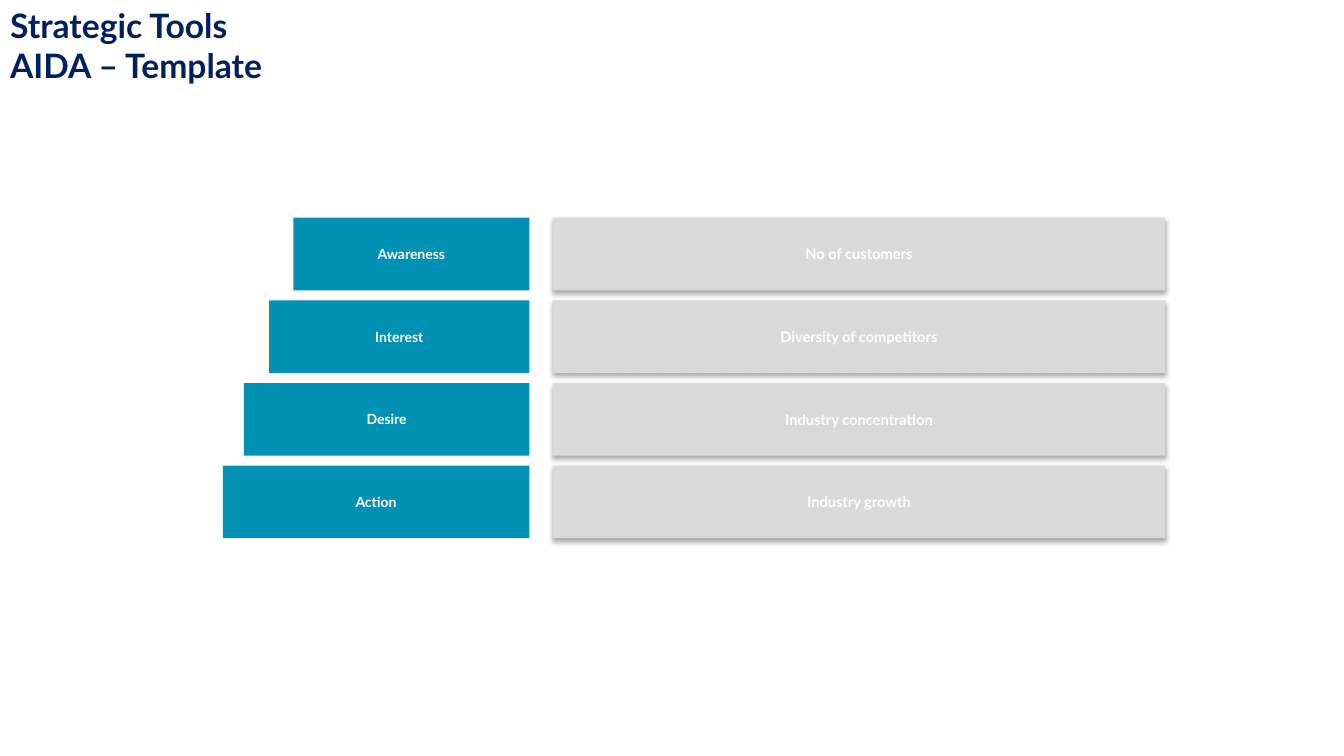
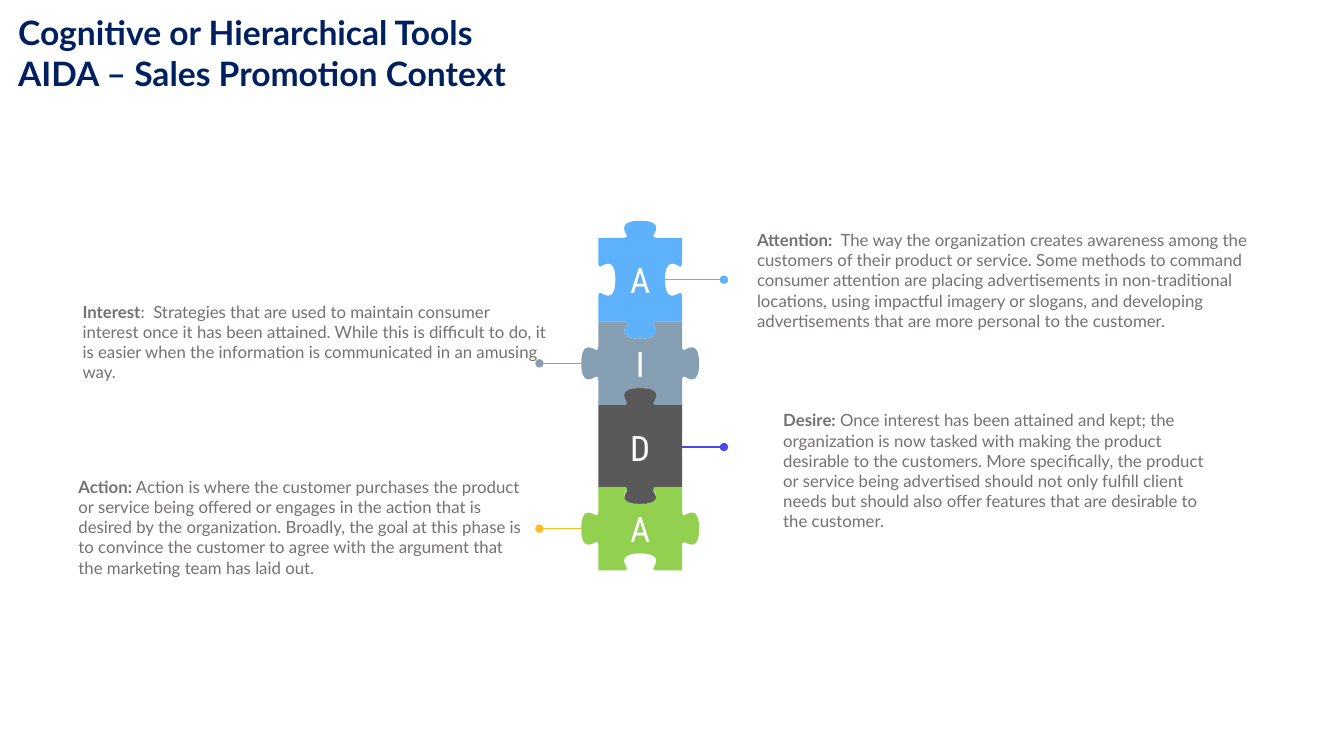
from dataclasses import dataclass

from lxml import etree
from pptx import Presentation
from pptx.dml.color import RGBColor as RGB
from pptx.enum.shapes import MSO_CONNECTOR as LINK, MSO_SHAPE as SHAPE
from pptx.enum.text import MSO_ANCHOR as ANCHOR, MSO_AUTO_SIZE as FIT, PP_ALIGN as ALIGN
from pptx.oxml.ns import qn
from pptx.util import Inches, Pt

# Shared look
NAVY = RGB(0x00, 0x20, 0x60)
TEAL = RGB(0x00, 0x91, 0xB5)
SILVER = RGB(0xD9, 0xD9, 0xD9)
WHITE = RGB(0xFF, 0xFF, 0xFF)
GREY = RGB(0x76, 0x71, 0x71)
SKY = RGB(0x5E, 0xB2, 0xFC)
SLATE = RGB(0x86, 0x9F, 0xB2)
DARK = RGB(0x59, 0x59, 0x59)
GREEN = RGB(0x92, 0xD0, 0x50)
VIOLET = RGB(0x49, 0x49, 0xE7)
AMBER = RGB(0xFC, 0xBD, 0x24)
FONT, THIN = "Lato", "Roboto Condensed"

# Stair of bars
ROW_TOP, ROW_STEP, BAR_H = 2.16, 0.82, 0.72
STEP_END, BAR_X, BAR_W = 5.25, 5.48, 6.08

# Puzzle column: a square cell, and one side's knob as Bezier curves
MID, CELL = 6.35, 0.83
HALF = CELL / 2
KNOB = (
    ((-0.17, 0), (-0.17, 0), (-0.13, 0), (-0.13, 0.02)),
    ((-0.13, 0.02), (-0.13, 0.03), (-0.25, 0.17), (0, 0.17)),
    ((0, 0.17), (0.25, 0.17), (0.13, 0.03), (0.13, 0.02)),
    ((0.13, 0.02), (0.13, 0), (0.17, 0), (0.17, 0)),
)
CUTS = 10


@dataclass
class Step:
    name: str
    width: float
    note: str


@dataclass
class Piece:
    mark: str
    top: float
    fill: RGB
    ends: int  # top and bottom: 1 knob, -1 socket
    sides: int  # left and right: 1 knob, -1 socket, 0 flat
    link: tuple[float, float]
    ink: RGB


@dataclass
class Note:
    head: str
    body: str
    left: float
    top: float
    width: float
    height: float


STEPS = (
    Step("Awareness", 2.34, "No of customers"),
    Step("Interest", 2.58, "Diversity of competitors"),
    Step("Desire", 2.83, "Industry concentration"),
    Step("Action", 3.04, "Industry growth"),
)
RIGHT, LEFT = (6.59, 7.18), (5.94, 5.35)
PIECES = (
    Piece("A", 2.36, SKY, 1, -1, RIGHT, SKY),
    Piece("I", 3.19, SLATE, -1, 1, LEFT, SLATE),
    Piece("D", 4.02, DARK, 1, 0, RIGHT, VIOLET),
    Piece("A", 4.83, GREEN, -1, 1, LEFT, AMBER),
)
NOTES = (
    Note("Attention:", "  The way the organization creates awareness among the customers of "
         "their product or service. Some methods to command consumer attention are placing "
         "advertisements in non-traditional locations, using impactful imagery or slogans, and "
         "developing advertisements that are more personal to the customer.",
         7.41, 2.23, 5.21, 1.11),
    Note("Interest", ":  Strategies that are used to maintain consumer interest once it has been "
         "attained. While this is difficult to do, it is easier when the information is "
         "communicated in an amusing way.", 0.72, 2.94, 4.81, 0.71),
    Note("Desire:", " Once interest has been attained and kept; the organization is now tasked "
         "with making the product desirable to the customers. More specifically, the product or "
         "service being advertised should not only fulfill client needs but should also offer "
         "features that are desirable to the customer.", 7.67, 4.02, 4.47, 1.11),
    Note("Action:", " Action is where the customer purchases the product or service being offered "
         "or engages in the action that is desired by the organization. Broadly, the goal at this "
         "phase is to convince the customer to agree with the argument that the marketing team "
         "has laid out.", 0.68, 4.68, 4.64, 1.11),
)


def add_run(para, text: str, size: float, ink: RGB, bold: bool = False, face: str = FONT) -> None:
    run = para.add_run()
    run.text = text
    font = run.font
    font.name, font.size, font.bold = face, Pt(size), bold
    font.color.rgb = ink


def add_slide(deck, lines: tuple[str, ...], left: float, top: float):
    """Add a slide with its navy title."""
    slide = deck.slides.add_slide(deck.slide_layouts[5])
    title = slide.shapes.title
    title.left, title.top = Inches(left), Inches(top)
    title.width, title.height = Inches(10.53), Inches(0.91)
    frame = title.text_frame
    frame.auto_size, frame.vertical_anchor = FIT.NONE, ANCHOR.TOP
    for i, line in enumerate(lines):
        para = frame.add_paragraph() if i else frame.paragraphs[0]
        para.alignment = ALIGN.LEFT
        add_run(para, line, 24, NAVY, True)
    return slide


def paint(shape, fill: RGB) -> None:
    shape.shadow.inherit = False
    shape.fill.solid()
    shape.fill.fore_color.rgb = fill
    shape.line.fill.background()


def label(shape, text: str, size: float, bold: bool, face: str) -> None:
    frame = shape.text_frame
    frame.vertical_anchor = ANCHOR.MIDDLE
    para = frame.paragraphs[0]
    para.alignment = ALIGN.CENTER
    add_run(para, text, size, WHITE, bold, face)


def add_bar(slide, left: float, top: float, width: float, fill: RGB, text: str, size: float):
    box = slide.shapes.add_shape(
        SHAPE.RECTANGLE, Inches(left), Inches(top), Inches(width), Inches(BAR_H))
    paint(box, fill)
    label(box, text, size, True, FONT)
    return box


def add_shade(shape) -> None:
    """Drop a soft shadow straight down."""
    fx = shape._element.spPr.find(qn("a:effectLst"))
    drop = etree.SubElement(fx, qn("a:outerShdw"), blurRad=str(Pt(3.5)), dist=str(Pt(2.2)),
                            dir="5400000", algn="t", rotWithShape="0")
    tint = etree.SubElement(drop, qn("a:srgbClr"), val="000000")
    etree.SubElement(tint, qn("a:alpha"), val="32000")


def add_link(slide, piece: Piece) -> None:
    y = Inches(piece.top + HALF)
    start, end = map(Inches, piece.link)
    line = slide.shapes.add_connector(LINK.STRAIGHT, start, y, end, y)
    line.line.color.rgb = piece.ink
    line.line.width = Pt(0.75)
    etree.SubElement(line.line._get_or_add_ln(), qn("a:tailEnd"), type="oval")
    etree.SubElement(line._element.spPr, qn("a:effectLst"))


def trace(kind: int) -> list[tuple[float, float]]:
    """Points of one side, left to right, with v pointing outward."""
    dots = [(-HALF, 0.0)]
    for a, b, c, d in KNOB if kind else ():
        for i in range(CUTS + 1):
            t = i / CUTS
            s = 1 - t
            u, v = (s**3 * p + 3 * s * s * t * q + 3 * s * t * t * r + t**3 * w
                    for p, q, r, w in zip(a, b, c, d))
            dots.append((u, v * kind))
    return dots


def add_piece(slide, piece: Piece) -> None:
    mid = piece.top + HALF
    dots = []
    # Each side is the top one after a quarter turn more
    for turn, kind in enumerate((piece.ends, piece.sides) * 2):
        for u, v in trace(kind):
            x, y = u, -HALF - v
            for _ in range(turn):
                x, y = -y, x
            dots.append((Inches(MID + x), Inches(mid + y)))
    pen = slide.shapes.build_freeform(*dots[0])
    pen.add_line_segments(dots[1:], close=True)
    shape = pen.convert_to_shape()
    paint(shape, piece.fill)
    label(shape, piece.mark, 25, False, THIN)


def add_note(slide, note: Note) -> None:
    box = slide.shapes.add_textbox(*map(Inches, (note.left, note.top, note.width, note.height)))
    frame = box.text_frame
    frame.word_wrap = True
    para = frame.paragraphs[0]
    add_run(para, note.head, 12, GREY, True)
    add_run(para, note.body, 12, GREY)


def main() -> None:
    deck = Presentation()
    deck.slide_width, deck.slide_height = Inches(13.33), Inches(7.5)

    # Template slide
    slide = add_slide(deck, ("Strategic Tools", "AIDA – Template"), 0, 0)
    for i, step in enumerate(STEPS):
        top = ROW_TOP + i * ROW_STEP
        add_bar(slide, STEP_END - step.width, top, step.width, TEAL, step.name, 10)
        add_shade(add_bar(slide, BAR_X, top, BAR_W, SILVER, step.note, 10.5))

    # Puzzle slide
    slide = add_slide(
        deck, ("Cognitive or Hierarchical Tools", "AIDA – Sales Promotion Context"), 0.08, 0.07)
    for piece in PIECES:
        add_link(slide, piece)
    for piece in PIECES:
        add_piece(slide, piece)
    for note in NOTES:
        add_note(slide, note)

    deck.save("out.pptx")


if __name__ == "__main__":
    main()
